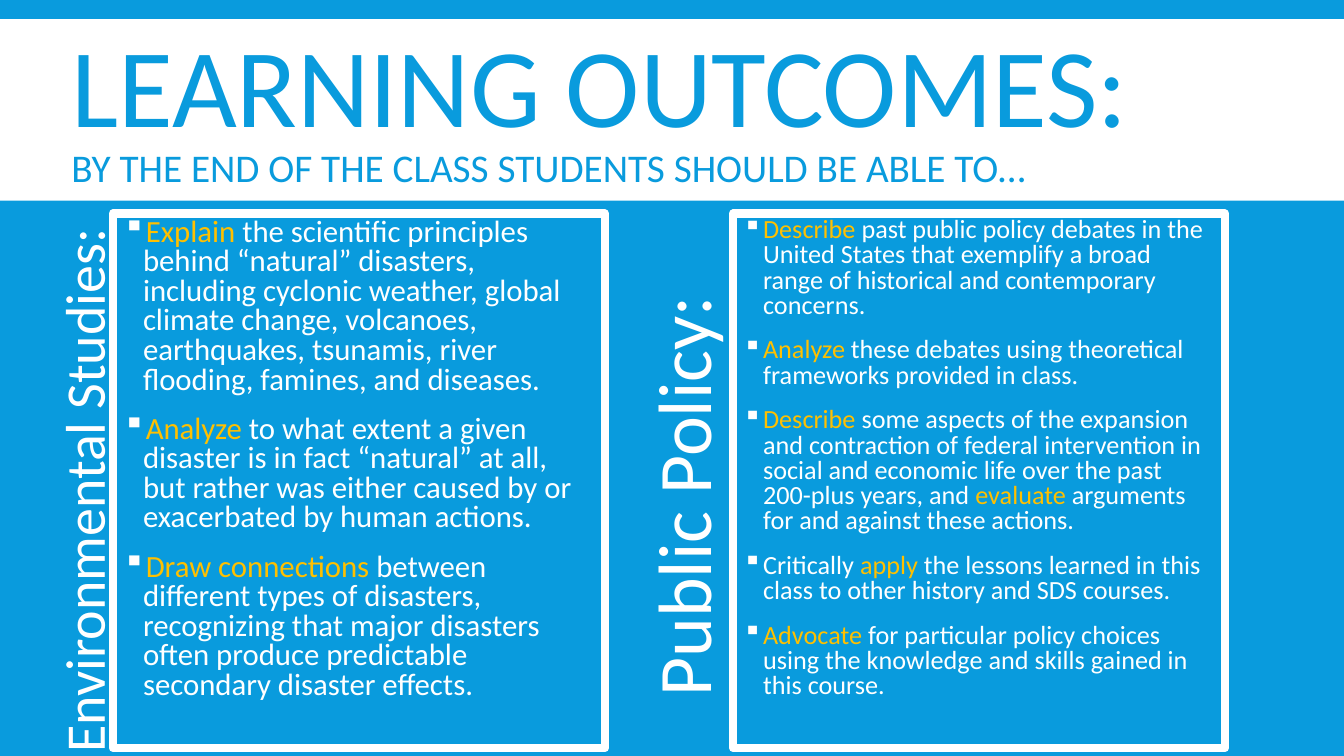
from lxml import etree
from pptx import Presentation
from pptx import util as u
from pptx.dml.color import RGBColor
from pptx.enum import shapes, text
from pptx.oxml.ns import qn

COLORS = {"blue": "099BDD", "white": "FFFFFF", "gold": "FFC000"}
FONT = "Calibri"
WIDTH, HEIGHT = 13.33, 7.5
FRAME_LEFT, FRAME_TOP, FRAME_WIDTH, FRAME_HEIGHT = 1.12, 2.12, 4.88, 5.3
COLUMN_STEP = 6.15
LABEL_MIDDLE = 4.78
BULLET_FORMAT = {"line_spacing": 0.8, "space_before": u.Pt(12), "space_after": u.Pt(2),
                 "alignment": text.PP_ALIGN.LEFT}
FRAME_FORMAT = {"word_wrap": True, "vertical_anchor": text.MSO_ANCHOR.TOP}
TITLE_FORMAT = {"word_wrap": True, "vertical_anchor": text.MSO_ANCHOR.MIDDLE}
LABEL_FORMAT = {"word_wrap": False, "auto_size": text.MSO_AUTO_SIZE.SHAPE_TO_FIT_TEXT}

subjects = [
    {"label": " Environmental Studies:", "label_size": 40, "label_center": 0.82,
     "label_box": (5.82, 0.77), "size": 22, "outcomes": [
         "*Explain *the scientific principles behind “natural” disasters, including cyclonic "
         "weather, global climate change, volcanoes, earthquakes, tsunamis, river flooding, "
         "famines, and diseases.",
         "*Analyze* to what extent a given disaster is in fact “natural” at all, but rather "
         "was either caused by or exacerbated by human actions.",
         "*Draw connections *between different types of disasters, recognizing that major "
         "disasters often produce predictable secondary disaster effects."]},
    {"label": "Public Policy:", "label_size": 54, "label_center": 6.76,
     "label_box": (4.46, 1.01), "size": 18.7, "outcomes": [
         "*Describe* past public policy debates in the United States that exemplify a broad "
         "range of historical and contemporary concerns.",
         "*Analyze *these debates using theoretical frameworks provided in class.",
         "*Describe* some aspects of the expansion and contraction of federal intervention in "
         "social and economic life over the past 200-plus years, and *evaluate* arguments for "
         "and against these actions.",
         "Critically *apply* the lessons learned in this class to other history and SDS courses.",
         "*Advocate* for particular policy choices using the knowledge and skills gained in "
         "this course."]},
]


def write(paragraph, words, size, color):
    run = paragraph.add_run()
    run.text = words
    run.font.name = FONT
    run.font.size = u.Pt(size)
    run.font.color.rgb = RGBColor.from_string(COLORS[color])


def apply_format(target, values):
    for name, value in values.items():
        setattr(target, name, value)


deck = Presentation()
deck.slide_width, deck.slide_height = u.Inches(WIDTH), u.Inches(HEIGHT)
slide = deck.slides.add_slide(deck.slide_layouts[6])
slide.background.fill.solid()
slide.background.fill.fore_color.rgb = RGBColor.from_string(COLORS["blue"])

band = slide.shapes.add_shape(shapes.MSO_SHAPE.RECTANGLE, 0, u.Inches(0.19),
                              u.Inches(WIDTH), u.Inches(1.8))
band.shadow.inherit = False
band.fill.solid()
band.fill.fore_color.rgb = RGBColor.from_string(COLORS["white"])
band.line.fill.background()

title = slide.shapes.add_textbox(*map(u.Inches, (0.61, 0.3, 11.68, 1.65))).text_frame
apply_format(title, TITLE_FORMAT)
heading = title.paragraphs[0]
heading.line_spacing = 0.85
write(heading, "LEARNING OUTCOMES:", 80, "blue")
heading.add_line_break()
write(heading, "BY THE END OF THE CLASS STUDENTS SHOULD BE ABLE TO…", 28, "blue")

for column, subject in enumerate(subjects):
    frame = slide.shapes.add_shape(
        shapes.MSO_SHAPE.RECTANGLE, u.Inches(FRAME_LEFT + column * COLUMN_STEP),
        u.Inches(FRAME_TOP), u.Inches(FRAME_WIDTH), u.Inches(FRAME_HEIGHT))
    frame.shadow.inherit = False
    frame.fill.background()
    frame.line.color.rgb = RGBColor.from_string(COLORS["white"])
    frame.line.width = u.Pt(6)
    apply_format(frame.text_frame, FRAME_FORMAT)
    for row, outcome in enumerate(subject["outcomes"]):
        bullet = frame.text_frame.add_paragraph() if row else frame.text_frame.paragraphs[0]
        apply_format(bullet, BULLET_FORMAT)
        properties = bullet._p.get_or_add_pPr()
        properties.set("marL", str(u.Inches(0.2)))
        properties.set("indent", str(u.Inches(-0.2)))
        bullet_color = etree.SubElement(properties, qn("a:buClr"))
        etree.SubElement(bullet_color, qn("a:srgbClr"), val=COLORS["white"])
        etree.SubElement(properties, qn("a:buChar"), char="▪")
        for part, words in enumerate(outcome.split("*")):
            if words:
                write(bullet, words, subject["size"], "gold" if part % 2 else "white")

    label_width, label_height = subject["label_box"]
    label = slide.shapes.add_textbox(
        u.Inches(subject["label_center"] - label_width / 2),
        u.Inches(LABEL_MIDDLE - label_height / 2),
        u.Inches(label_width), u.Inches(label_height))
    label.rotation = 270
    apply_format(label.text_frame, LABEL_FORMAT)
    write(label.text_frame.paragraphs[0], subject["label"], subject["label_size"], "white")

deck.save("out.pptx")
